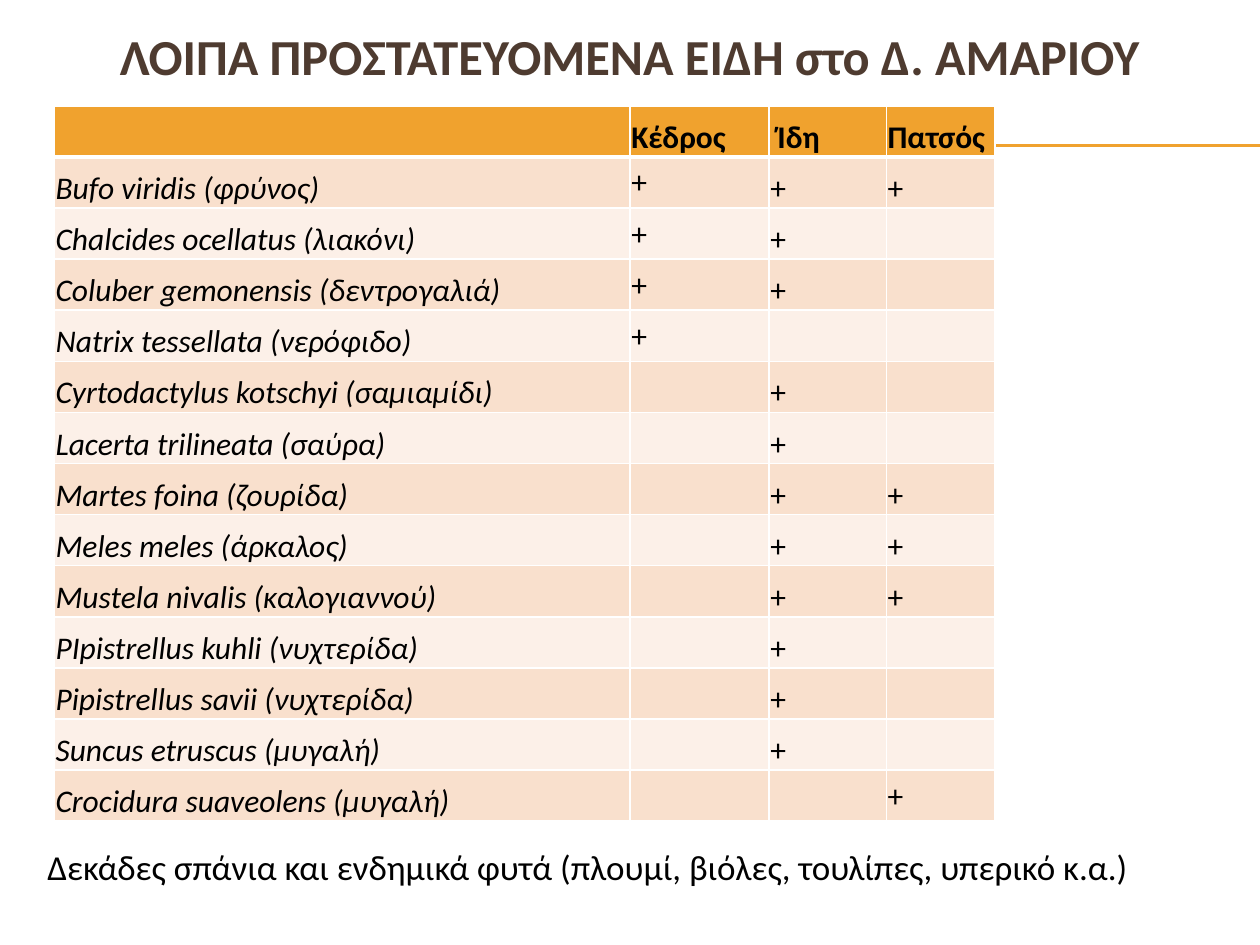
"""Build a slide listing the protected species of the Amari municipality."""
import pptx
import pptx.dml.color
import pptx.enum.shapes
import pptx.enum.text
import pptx.oxml
import pptx.oxml.ns
import pptx.util

Pt = pptx.util.Pt
Anchor = pptx.enum.text.MSO_ANCHOR
Align = pptx.enum.text.PP_ALIGN

TITLE = "ΛΟΙΠΑ ΠΡΟΣΤΑΤΕΥΟΜΕΝΑ ΕΙΔΗ στο Δ. ΑΜΑΡΙΟΥ"
CAPTION = "Δεκάδες σπάνια και ενδημικά φυτά (πλουμί, βιόλες, τουλίπες, υπερικό κ.α.)"
HEADER = ("", "Κέδρος", " Ίδη", "Πατσός")
SPECIES = [
    ("Bufo viridis (φρύνος)", "+", "+", "+"),
    ("Chalcides ocellatus (λιακόνι)", "+", "+", ""),
    ("Coluber gemonensis (δεντρογαλιά)", "+", "+", ""),
    ("Natrix tessellata (νερόφιδο)", "+", "", ""),
    ("Cyrtodactylus kotschyi (σαμιαμίδι)", "", "+", ""),
    ("Lacerta trilineata (σαύρα)", "", "+", ""),
    ("Martes foina (ζουρίδα)", "", "+", "+"),
    ("Meles meles (άρκαλος)", "", "+", "+"),
    ("Mustela nivalis (καλογιαννού)", "", "+", "+"),
    ("PIpistrellus kuhli (νυχτερίδα)", "", "+", ""),
    ("Pipistrellus savii (νυχτερίδα)", "", "+", ""),
    ("Suncus etruscus (μυγαλή)", "", "+", ""),
    ("Crocidura suaveolens (μυγαλή)", "", "", "+"),
]
COLORS = {
    "accent": "F0A22E",
    "odd": "F9E0CD",
    "even": "FCF0E8",
    "border": "FFFFFF",
    "title": "4E3B30",
    "text": "000000",
}
COLUMN_WIDTHS = (329, 79.5, 67, 62)
ROW_HEIGHT = 29.2
TABLE_LEFT, TABLE_TOP = 31, 60.5
RULE_TOPS = (82.8, 83.4)


def color(name):
    return pptx.dml.color.RGBColor.from_string(COLORS[name])


def write(frame, text, size=18, tint="text", bold=False, italic=False, align=Align.LEFT):
    paragraph = frame.paragraphs[0]
    paragraph.alignment = align
    run = paragraph.add_run()
    run.text = text
    run.font.name = "Calibri"
    run.font.size = Pt(size)
    run.font.bold = bold
    run.font.italic = italic
    run.font.color.rgb = color(tint)


def add_rule(slide, top):
    rule = slide.shapes.add_connector(
        pptx.enum.shapes.MSO_CONNECTOR.STRAIGHT, Pt(40.5), Pt(top), Pt(720), Pt(top))
    rule.line.color.rgb = color("accent")
    rule.line.width = Pt(0.75)
    properties = rule.element.find(pptx.oxml.ns.qn("p:spPr"))
    properties.append(pptx.oxml.parse_xml(f'<a:effectLst {pptx.oxml.ns.nsdecls("a")}/>'))


def set_borders(cell, top, bottom):
    properties = cell._tc.get_or_add_tcPr()
    widths = {"lnL": 1, "lnR": 1, "lnT": top, "lnB": bottom}
    for position, (side, width) in enumerate(widths.items()):
        properties.insert(position, pptx.oxml.parse_xml(
            f'<a:{side} {pptx.oxml.ns.nsdecls("a")} w="{Pt(width)}"><a:solidFill>'
            f'<a:srgbClr val="{COLORS["border"]}"/></a:solidFill></a:{side}>'))


def add_species_table(slide):
    rows = [HEADER, *SPECIES]
    table = slide.shapes.add_table(
        len(rows), len(HEADER), Pt(TABLE_LEFT), Pt(TABLE_TOP),
        Pt(sum(COLUMN_WIDTHS)), Pt(ROW_HEIGHT * len(rows))).table
    for column, width in zip(table.columns, COLUMN_WIDTHS):
        column.width = Pt(width)
    for row_index, values in enumerate(rows):
        table.rows[row_index].height = Pt(ROW_HEIGHT)
        is_header = row_index == 0
        fill = "accent" if is_header else "odd" if row_index % 2 else "even"
        for column_index, value in enumerate(values):
            cell = table.cell(row_index, column_index)
            cell.fill.solid()
            cell.fill.fore_color.rgb = color(fill)
            cell.margin_left = cell.margin_right = cell.margin_top = Pt(0.75)
            cell.margin_bottom = 0
            centred = not is_header and (column_index == 1 or values is SPECIES[-1] and column_index == 3)
            cell.vertical_anchor = Anchor.MIDDLE if centred else Anchor.BOTTOM
            set_borders(cell, 3 if row_index == 1 else 1, 3 if is_header else 1)
            if value:
                write(cell.text_frame, value, bold=is_header,
                      italic=not is_header and column_index == 0)


def main():
    presentation = pptx.Presentation()
    presentation.slide_width, presentation.slide_height = Pt(720), Pt(540)
    slide = presentation.slides.add_slide(presentation.slide_layouts[5])

    for top in RULE_TOPS:
        add_rule(slide, top)
    add_species_table(slide)

    title = slide.shapes.title
    title.left, title.top, title.width, title.height = 0, Pt(9.5), Pt(720), Pt(39.5)
    title.text_frame.vertical_anchor = Anchor.TOP
    title.text_frame.margin_top = Pt(5)
    title.text_frame.auto_size = pptx.enum.text.MSO_AUTO_SIZE.NONE
    write(title.text_frame, TITLE, size=28.8, tint="title", bold=True, align=Align.CENTER)

    caption = slide.shapes.add_textbox(Pt(20), Pt(479.5), Pt(669), Pt(31.5))
    caption.text_frame.word_wrap = True
    caption.text_frame.auto_size = pptx.enum.text.MSO_AUTO_SIZE.SHAPE_TO_FIT_TEXT
    write(caption.text_frame, CAPTION, size=20)

    presentation.save("out.pptx")


if __name__ == "__main__":
    main()
